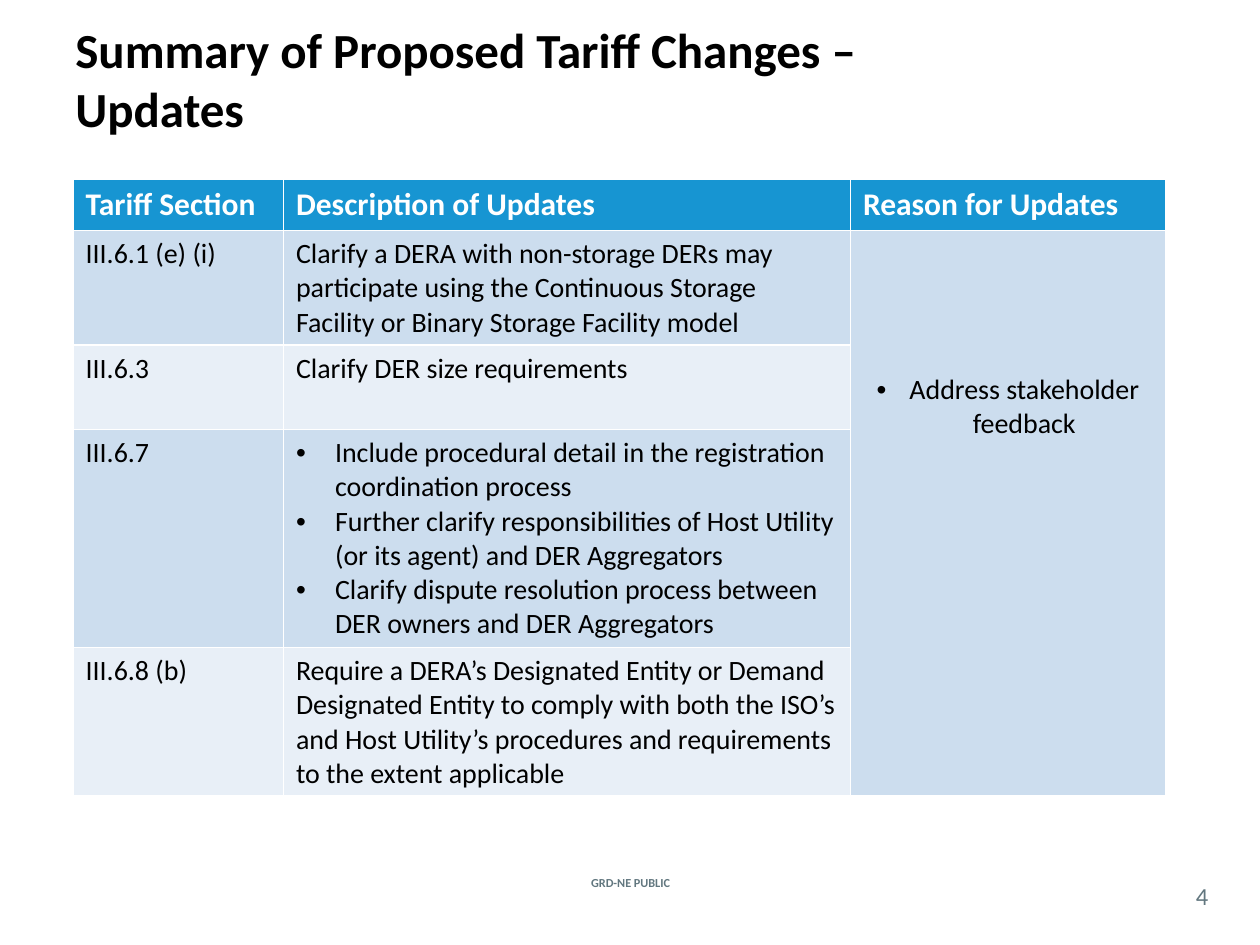
from lxml import etree
from pptx import Presentation
from pptx.dml.color import RGBColor
from pptx.enum.text import MSO_ANCHOR as Anchor, PP_ALIGN as Align
from pptx.oxml.ns import qn
from pptx.util import Inches, Pt

TITLE = "Summary of Proposed Tariff Changes –\vUpdates"
CLASSIFICATION = "GRD-NE PUBLIC"
PAGE = "4"
HEADINGS = ["Tariff Section", "Description of Updates", "Reason for Updates"]
UPDATES = [
    ("III.6.1 (e) (i)", "Clarify a DERA with non-storage DERs may participate using the "
     "Continuous Storage Facility or Binary Storage Facility model"),
    ("III.6.3", "Clarify DER size requirements"),
    ("III.6.7", [
        "Include procedural detail in the registration coordination process",
        "Further clarify responsibilities of Host Utility (or its agent) and DER Aggregators",
        "Clarify dispute resolution process between DER owners and DER Aggregators",
    ]),
    ("III.6.8 (b)", "Require a DERA’s Designated Entity or Demand Designated Entity to comply "
     "with both the ISO’s and Host Utility’s procedures and requirements to the extent applicable"),
]
REASON = ["Address stakeholder feedback"]

COLUMN_WIDTHS = [1.67, 4.5, 2.5]
ROW_HEIGHTS = [0.41, 0.91, 0.67, 1.73, 1.18]
BANDS = ["CCDDEE", "E8EFF7"]
HEADER_BLUE, GREY = "1795D2", "62777F"


def rgb(value):
    return RGBColor.from_string(value)


def write(frame, text, size=16, color="000000", bold=False, align=Align.LEFT, indent=0):
    lines = [text] if isinstance(text, str) else text
    for i, line in enumerate(lines):
        paragraph = frame.paragraphs[0] if i == 0 else frame.add_paragraph()
        paragraph.text = line
        paragraph.alignment = align
        if indent:
            properties = paragraph._p.get_or_add_pPr()
            properties.set("marL", str(Inches(indent)))
            properties.set("indent", str(-Inches(indent)))
            etree.SubElement(properties, qn("a:buFont")).set("typeface", "Arial")
            etree.SubElement(properties, qn("a:buChar")).set("char", "•")
        for run in paragraph.runs:
            font = run.font
            font.name, font.size, font.bold = "Calibri", Pt(size), bold
            font.color.rgb = rgb(color)


def add_label(slide, text, left, top, width, height, inset=0, **look):
    frame = slide.shapes.add_textbox(*map(Inches, (left, top, width, height))).text_frame
    frame.word_wrap = True
    frame.vertical_anchor = Anchor.MIDDLE
    frame.margin_left = frame.margin_right = Inches(inset)
    frame.margin_top = frame.margin_bottom = Inches(inset / 2)
    write(frame, text, **look)


def fill_cell(cell, text, fill, **look):
    cell.fill.solid()
    cell.fill.fore_color.rgb = rgb(fill)
    write(cell.text_frame, text, **look)


def add_updates(slide):
    table = slide.shapes.add_table(
        len(ROW_HEIGHTS), len(COLUMN_WIDTHS), Inches(0.58), Inches(1.42),
        Inches(sum(COLUMN_WIDTHS)), Inches(sum(ROW_HEIGHTS))).table
    for column, width in zip(table.columns, COLUMN_WIDTHS):
        column.width = Inches(width)
    for row, height in zip(table.rows, ROW_HEIGHTS):
        row.height = Inches(height)

    for c, heading in enumerate(HEADINGS):
        fill_cell(table.cell(0, c), heading, HEADER_BLUE, size=18, color="FFFFFF", bold=True)
    for r, (section, description) in enumerate(UPDATES, 1):
        band = BANDS[(r - 1) % 2]
        fill_cell(table.cell(r, 0), section, band)
        fill_cell(table.cell(r, 1), description, band,
                  indent=0.31 if isinstance(description, list) else 0)

    reason = table.cell(1, 2)
    reason.merge(table.cell(len(UPDATES), 2))
    reason.margin_top = Inches(1.13)
    fill_cell(reason, REASON, BANDS[0], align=Align.CENTER, indent=0.26)


def main():
    deck = Presentation()
    deck.slide_width, deck.slide_height = Inches(10), Inches(7.5)
    slide = deck.slides.add_slide(deck.slide_layouts[6])
    add_label(slide, CLASSIFICATION, 4.27, 6.92, 1.47, 0.17,
              size=7, color=GREY, bold=True, align=Align.CENTER)
    add_label(slide, PAGE, 9.33, 6.96, 0.42, 0.29, size=14, color=GREY, align=Align.CENTER)
    add_label(slide, TITLE, 0.5, 0.08, 9, 1.08, inset=0.1, size=28, bold=True)
    add_updates(slide)
    deck.save("out.pptx")


if __name__ == "__main__":
    main()
